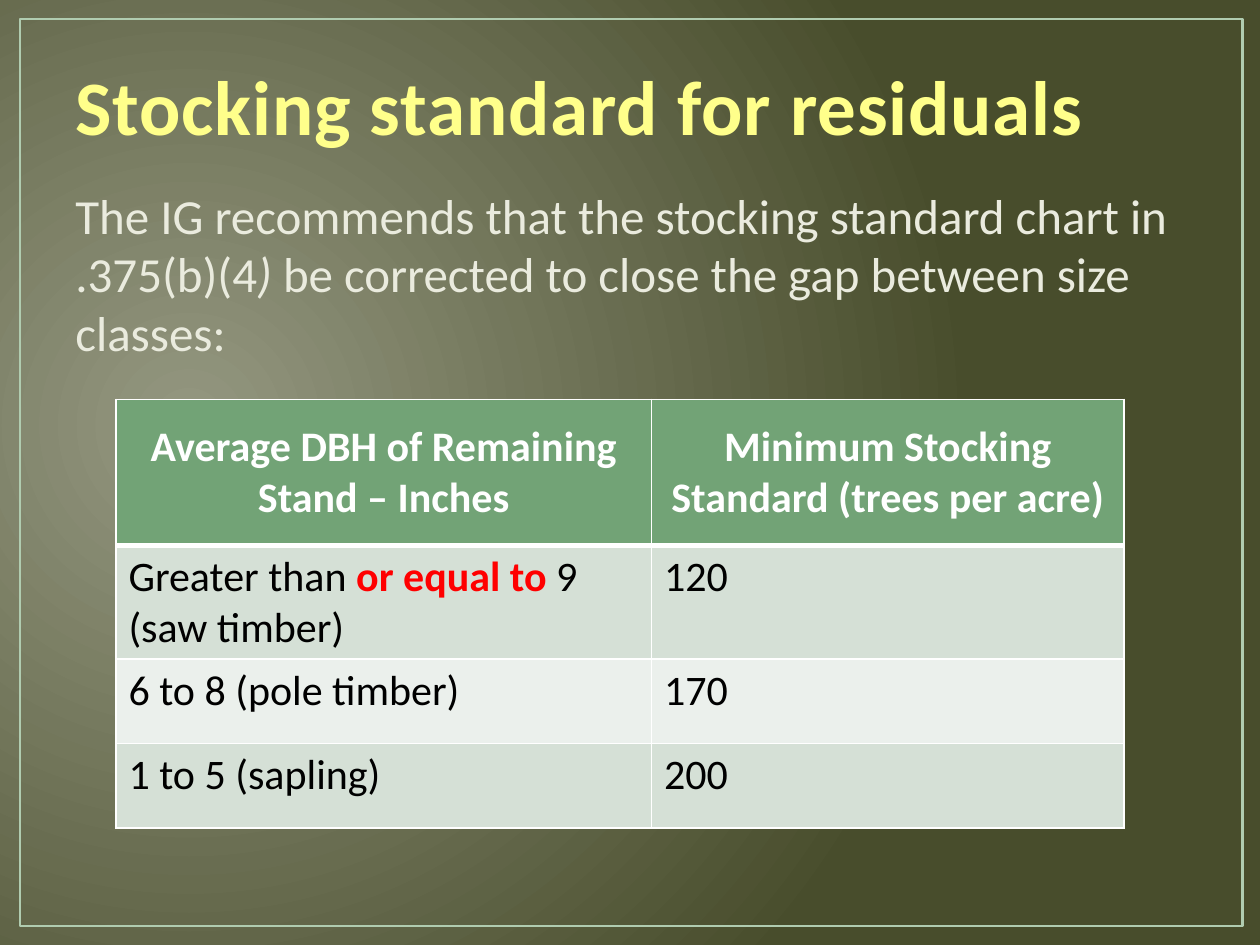
from typing import NamedTuple

from lxml import etree
from pptx import Presentation
from pptx.dml.color import RGBColor
from pptx.enum.shapes import MSO_SHAPE
from pptx.enum.text import MSO_ANCHOR, PP_ALIGN
from pptx.oxml.ns import qn
from pptx.util import Inches, Pt

RECT = MSO_SHAPE.RECTANGLE
TOP, MIDDLE, BOTTOM = MSO_ANCHOR.TOP, MSO_ANCHOR.MIDDLE, MSO_ANCHOR.BOTTOM
LEFT, CENTER = PP_ALIGN.LEFT, PP_ALIGN.CENTER
FONT = "Calibri"
COLORS = {
    "glow": "949780", "olive": "484D2C", "frame": "B0CCB0",
    "title": "FFFF8B", "edge": "375439", "body": "EAEBDE",
    "head": "72A376", "band": "D5E0D6", "pale": "EBF0EC",
    "white": "FFFFFF", "black": "000000", "red": "FF0000",
}


class Span(NamedTuple):
    text: str
    color: str
    size: float = 24
    bold: bool = False
    italic: bool = False


class Box(NamedTuple):
    left: float
    top: float
    width: float
    height: float


class Row(NamedTuple):
    height: float
    fill: str
    cells: list[list[Span]]


def head(text: str) -> list[Span]:
    return [Span(text, "white", bold=True)]


def entry(text: str) -> list[Span]:
    return [Span(text, "black")]


TITLE = [Span("Stocking standard for residuals", "title", 44, True)]
BODY = [
    Span("The IG recommends that the stocking standard chart in .375(b)(4", "body", 28),
    Span(") ", "body", 28, italic=True),
    Span("be corrected to close the gap between size classes:", "body", 28),
]
SIZES = [*entry("Greater than "), Span("or equal to ", "red", bold=True),
         *entry("9 (saw timber)")]
COLS = [4.25, 3.75]
ROWS = [
    Row(1.16, "head", [head("Average DBH of Remaining Stand – Inches"),
                       head("Minimum Stocking Standard (trees per acre)")]),
    Row(0.67, "band", [SIZES, entry("120")]),
    Row(0.67, "pale", [entry("6 to 8 (pole timber)"), entry("170")]),
    Row(0.67, "band", [entry("1 to 5 (sapling)"), entry("200")]),
]


def rgb(name: str) -> RGBColor:
    return RGBColor.from_string(COLORS[name])


def add_fill(parent, name: str) -> None:
    fill = etree.SubElement(parent, qn("a:solidFill"))
    etree.SubElement(fill, qn("a:srgbClr"), val=COLORS[name])


def add_runs(para, spans: list[Span]) -> None:
    for span in spans:
        run = para.add_run()
        run.text = span.text
        font = run.font
        font.name, font.size = FONT, Pt(span.size)
        font.bold, font.italic = span.bold, span.italic
        font.color.rgb = rgb(span.color)


def add_text(slide, box: Box, spans: list[Span], anchor, before: float = 0):
    frame = slide.shapes.add_textbox(*map(Inches, box)).text_frame
    frame.word_wrap = True
    frame.vertical_anchor = anchor
    para = frame.paragraphs[0]
    para.space_before = Pt(before)
    add_runs(para, spans)
    return para


def outline(run) -> None:
    """Give a run a thin edge and slightly wider letter spacing."""
    props = run.font.fill and run._r.get_or_add_rPr()
    props.set("spc", "50")
    line = etree.Element(qn("a:ln"), w=str(Pt(1.05)))
    add_fill(line, "edge")
    props.insert(0, line)


def paint(slide) -> None:
    """Fill the background with a radial glow left of the centre."""
    fill = slide.background.fill
    fill.gradient()
    for stop, name, place in zip(fill.gradient_stops, ("glow", "olive"), (0, 1)):
        stop.color.rgb = rgb(name)
        stop.position = place
    grad = slide.element.find(".//" + qn("a:gradFill"))
    grad.remove(grad.find(qn("a:lin")))
    shade = etree.Element(qn("a:path"))
    shade.set("path", "circle")
    etree.SubElement(shade, qn("a:fillToRect"),
                     l="15000", t="50000", r="85000", b="60000")
    grad.find(qn("a:gsLst")).addnext(shade)


def add_frame(slide, box: Box) -> None:
    frame = slide.shapes.add_shape(RECT, *map(Inches, box))
    frame.shadow.inherit = False
    frame.fill.background()
    frame.line.color.rgb = rgb("frame")
    frame.line.width = Pt(1.5)


def add_borders(cell, top: float, bottom: float) -> None:
    props = cell._tc.get_or_add_tcPr()
    sides = {"lnL": 1, "lnR": 1, "lnT": top, "lnB": bottom}
    for place, (side, width) in enumerate(sides.items()):
        line = etree.Element(qn("a:" + side), w=str(Pt(width)))
        add_fill(line, "white")
        props.insert(place, line)


def add_grid(slide, left: float, top: float) -> None:
    box = Box(left, top, sum(COLS), sum(row.height for row in ROWS))
    table = slide.shapes.add_table(len(ROWS), len(COLS), *map(Inches, box)).table
    for col, width in zip(table.columns, COLS):
        col.width = Inches(width)
    for i, row in enumerate(ROWS):
        table.rows[i].height = Inches(row.height)
        for j, spans in enumerate(row.cells):
            cell = table.cell(i, j)
            cell.fill.solid()
            cell.fill.fore_color.rgb = rgb(row.fill)
            cell.vertical_anchor = TOP if i else MIDDLE
            para = cell.text_frame.paragraphs[0]
            para.alignment = LEFT if i else CENTER
            add_runs(para, spans)
            add_borders(cell, 3 if i == 1 else 1, 3 if i == 0 else 1)


def main() -> None:
    deck = Presentation()
    deck.slide_width, deck.slide_height = Inches(10), Inches(7.5)
    slide = deck.slides.add_slide(deck.slide_layouts[6])
    paint(slide)
    add_frame(slide, Box(0.16, 0.15, 9.7, 7.2))
    title = add_text(slide, Box(0.5, 0.3, 9, 0.95), TITLE, BOTTOM)
    outline(title.runs[0])
    add_text(slide, Box(0.5, 1.42, 9.17, 5.12), BODY, TOP, 5.6)
    add_grid(slide, 0.92, 3.17)
    deck.save("out.pptx")


if __name__ == "__main__":
    main()
